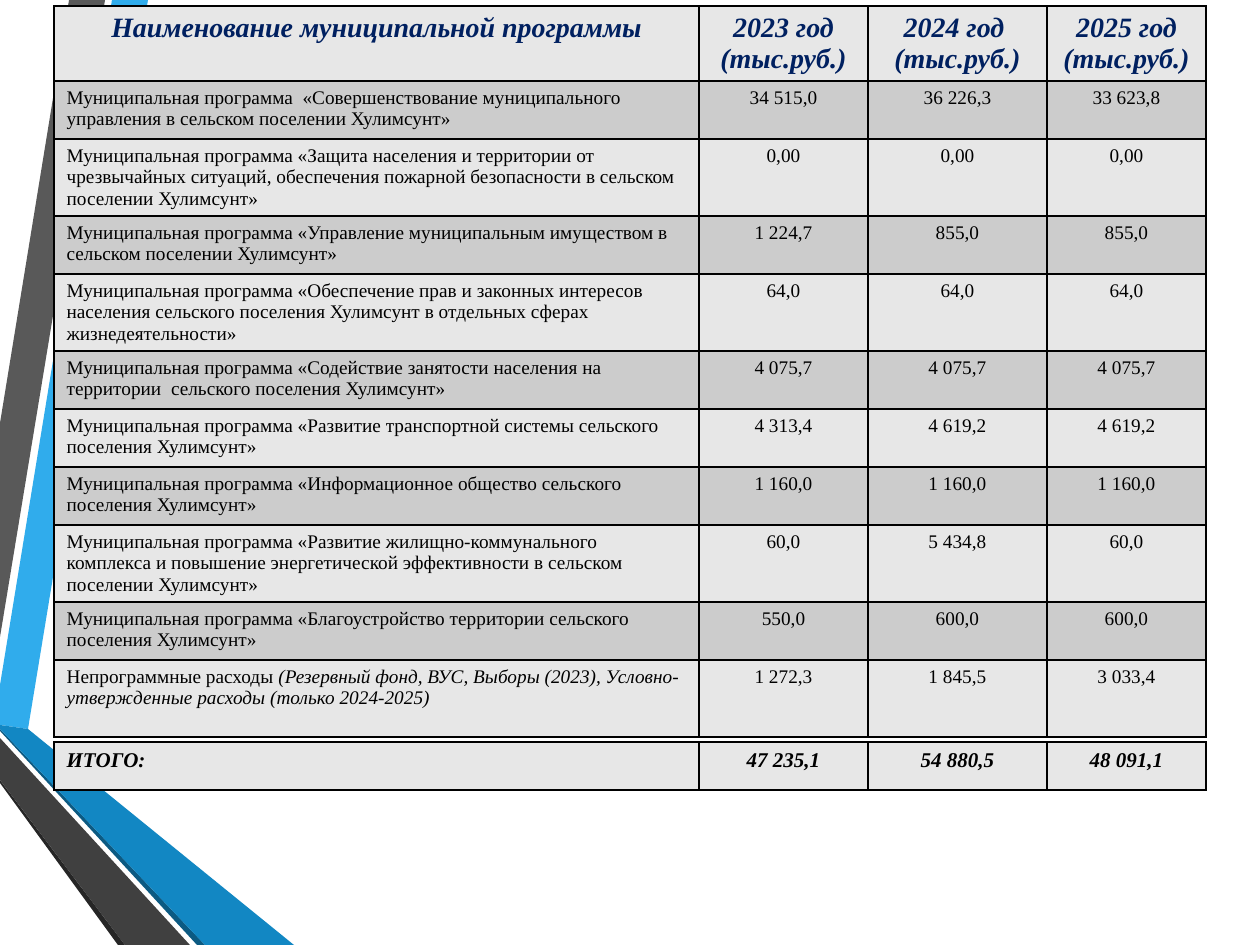
from dataclasses import dataclass

from lxml.etree import SubElement
from pptx import Presentation
from pptx.dml.color import RGBColor
from pptx.enum.text import PP_ALIGN
from pptx.oxml.ns import qn
from pptx.util import Pt

SCALE = 914400 / 126


def px(n):
    return round(n * SCALE)


@dataclass(frozen=True)
class Theme:
    font: str = "Times New Roman"
    header_size: int = 16
    body_size: int = 11
    total_size: int = 12
    header: str = "002060"
    text: str = "000000"
    border: str = "000000"
    light: str = "E7E7E7"
    dark: str = "CCCCCC"


@dataclass(frozen=True)
class TextStyle:
    size: int
    color: str
    strong: bool


class Deck:
    def __init__(self, theme):
        self.theme = theme
        self.prs = Presentation()
        self.prs.slide_width, self.prs.slide_height = px(1260), px(945)
        self.s = None

    def add_slide(self):
        self.s = self.prs.slides.add_slide(self.prs.slide_layouts[6])

    def polygon(self, points, color):
        builder = self.s.shapes.build_freeform(*points[0], scale=SCALE)
        builder.add_line_segments(points[1:], close=True)
        sp = builder.convert_to_shape()
        sp.shadow.inherit = False
        sp.fill.solid()
        sp.fill.fore_color.rgb = RGBColor.from_string(color)
        sp.line.fill.background()

    def borders(self, cell):
        tc_pr = cell._tc.get_or_add_tcPr()
        for side in ("lnL", "lnR", "lnT", "lnB"):
            ln = SubElement(tc_pr, qn(f"a:{side}"), w=str(Pt(1)))
            fill = SubElement(ln, qn("a:solidFill"))
            SubElement(fill, qn("a:srgbClr"), val=self.theme.border)

    def cell(self, cell, content, style, fill, centered):
        self.borders(cell)
        cell.fill.solid()
        cell.fill.fore_color.rgb = RGBColor.from_string(fill)
        tf = cell.text_frame
        lines = content if isinstance(content, list) else [content]
        for i, line in enumerate(lines):
            p = tf.add_paragraph() if i else tf.paragraphs[0]
            p.alignment = PP_ALIGN.CENTER if centered else PP_ALIGN.LEFT
            p.font.name = self.theme.font
            p.font.size = Pt(style.size)
            p.font.bold = style.strong
            p.font.color.rgb = RGBColor.from_string(style.color)
            if isinstance(line, str):
                p.font.italic = style.strong
                p.add_run().text = line
            else:
                for text, italic in line:
                    r = p.add_run()
                    r.text = text
                    r.font.italic = italic

    def table(self, left, top, widths, heights, rows, styles):
        frame = self.s.shapes.add_table(
            len(rows), len(widths), px(left), px(top), px(sum(widths)), px(sum(heights))
        )
        table = frame.table
        table.first_row = table.horz_banding = False
        for col, width in zip(table.columns, widths):
            col.width = px(width)
        for i, (row, height, style) in enumerate(zip(rows, heights, styles)):
            table.rows[i].height = px(height)
            fill = self.theme.dark if i % 2 and i < len(rows) else self.theme.light
            for j, content in enumerate(row):
                centered = j > 0 or style.size == self.theme.header_size
                self.cell(table.cell(i, j), content, style, fill, centered)


STRIPES = [
    ("30ACEC", [(0, 685), (0, 725), (28, 729), (148, 0), (112, 0)]),
    ("595959", [(105, 0), (69, 0), (0, 423), (0, 637)]),
    ("262626", [(0, 780), (0, 783), (118, 945), (125, 945)]),
    ("0C5A82", [(0, 729), (0, 731), (197, 945), (205, 945)]),
    ("1287C3", [(0, 729), (205, 945), (294, 945), (28, 729), (0, 725)]),
    ("404040", [(0, 780), (125, 945), (190, 945), (0, 738)]),
]
HEADER = [
    "Наименование муниципальной программы",
    ["2023 год", "(тыс.руб.)"],
    "2024 год  (тыс.руб.)",
    "2025 год (тыс.руб.)",
]
PROGRAMS = [
    (" «Совершенствование муниципального управления в сельском поселении Хулимсунт»",
     "34 515,0", "36 226,3", "33 623,8"),
    ("«Защита населения и территории от чрезвычайных ситуаций, обеспечения пожарной "
     "безопасности в сельском поселении Хулимсунт»", "0,00", "0,00", "0,00"),
    ("«Управление муниципальным имуществом в сельском поселении Хулимсунт»",
     "1 224,7", "855,0", "855,0"),
    ("«Обеспечение прав и законных интересов населения сельского поселения Хулимсунт "
     "в отдельных сферах жизнедеятельности»", "64,0", "64,0", "64,0"),
    ("«Содействие занятости населения на территории  сельского поселения Хулимсунт»",
     "4 075,7", "4 075,7", "4 075,7"),
    ("«Развитие транспортной системы сельского поселения Хулимсунт»",
     "4 313,4", "4 619,2", "4 619,2"),
    ("«Информационное общество сельского поселения Хулимсунт»",
     "1 160,0", "1 160,0", "1 160,0"),
    ("«Развитие жилищно-коммунального комплекса и повышение энергетической "
     "эффективности в сельском поселении Хулимсунт»", "60,0", "5 434,8", "60,0"),
    ("«Благоустройство территории сельского поселения Хулимсунт»",
     "550,0", "600,0", "600,0"),
]
OTHER = [
    [[("Непрограммные расходы ", False),
      ("(Резервный фонд, ВУС, Выборы (2023), Условно-утвержденные расходы "
       "(только 2024-2025)", True)]],
    "1 272,3", "1 845,5", "3 033,4",
]
TOTAL = ["ИТОГО:", "47 235,1", "54 880,5", "48 091,1"]
WIDTHS = [645, 169, 179, 159]
HEIGHTS = [75, 58, 77, 58, 77, 58, 58, 58, 77, 58, 77]


def main():
    theme = Theme()
    header = TextStyle(theme.header_size, theme.header, True)
    body = TextStyle(theme.body_size, theme.text, False)
    total = TextStyle(theme.total_size, theme.text, True)
    programs = [[f"Муниципальная программа {name}", *sums] for name, *sums in PROGRAMS]
    rows = [HEADER, *programs, OTHER]

    deck = Deck(theme)
    deck.add_slide()
    for color, points in STRIPES:
        deck.polygon(points, color)
    deck.table(54, 6, WIDTHS, HEIGHTS, rows, [header] + [body] * (len(rows) - 1))
    deck.table(54, 742, WIDTHS, [48], [TOTAL], [total])
    deck.prs.save("out.pptx")


if __name__ == "__main__":
    main()
